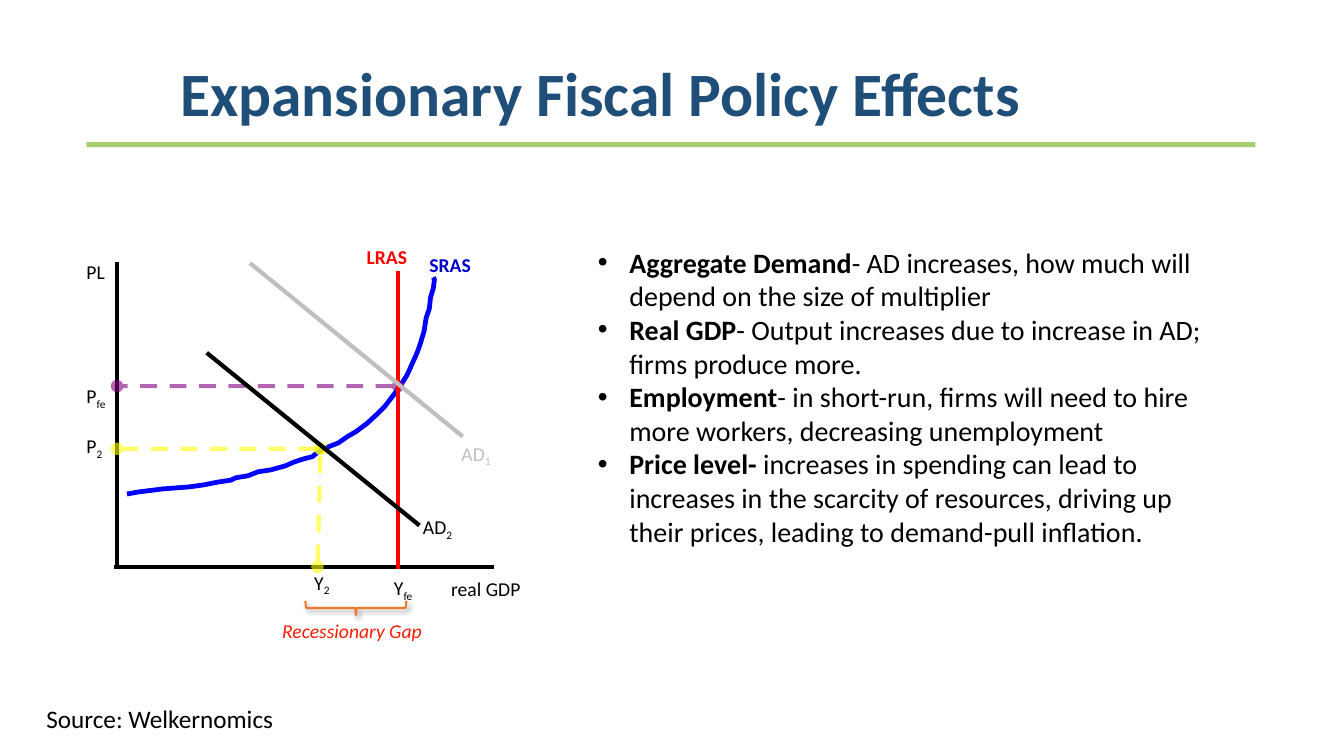
from lxml.etree import SubElement
from pptx import Presentation
from pptx.dml.color import RGBColor
from pptx.enum.dml import MSO_LINE
from pptx.enum.shapes import MSO_CONNECTOR, MSO_SHAPE
from pptx.enum.text import MSO_ANCHOR, MSO_AUTO_SIZE, PP_ALIGN
from pptx.oxml.ns import qn
from pptx.util import Cm, Pt

FONT = "Calibri"
BLACK, GREY, RED = "000000", "BFBFBF", "FF0000"
PURPLE, YELLOW = "800080", "FFFF00"
LEFT_AXIS, BOTTOM_AXIS = 1.02, 8.23
Y_FE, Y_2 = 8.1, 6.15
P_FE, P_2 = 3.68, 5.26

SRAS_POINTS = [
    (1.27, 6.4), (1.55, 6.35), (2.18, 6.27), (2.84, 6.22), (3.2, 6.17),
    (3.56, 6.1), (3.89, 6.05), (4.01, 5.99), (4.32, 5.94), (4.57, 5.84),
    (4.9, 5.79), (5.26, 5.69), (5.49, 5.59), (5.74, 5.51), (5.94, 5.46),
    (6.1, 5.33), (6.35, 5.21), (6.6, 5.11), (6.83, 4.95), (7.04, 4.83),
    (7.32, 4.62), (7.57, 4.39), (7.77, 4.19), (8, 3.89), (8.2, 3.61),
    (8.33, 3.4), (8.43, 3.18), (8.59, 2.82), (8.66, 2.62), (8.76, 2.29),
    (8.81, 1.96), (8.89, 1.73), (8.92, 1.45), (8.99, 1.22), (9.02, 0.99),
    (8.99, 0.94),
]

SOLID_LINES = [
    (LEFT_AXIS, 0.56, LEFT_AXIS, 8.2, BLACK),
    (0.94, BOTTOM_AXIS, 10.52, BOTTOM_AXIS, BLACK),
]
GUIDES = [
    (Y_FE, P_FE, LEFT_AXIS, P_FE, PURPLE),
    (Y_2, P_2, LEFT_AXIS, P_2, YELLOW),
    (6.07, BOTTOM_AXIS, Y_2, P_2, YELLOW),
]
CURVES = [
    (Y_FE, 8.28, Y_FE, 0.79, RED),
    (4.37, 0.58, 9.73, 4.95, GREY),
    (3.28, 2.84, 8.64, 7.19, BLACK),
]

LABELS = [
    ("PL", "", 0, 0.38, 1.75, BLACK, False, False),
    ("SRAS", "", 8.64, 0.2, 1.93, "0000CC", True, False),
    ("LRAS", "", 7.06, 0, 1.93, RED, True, False),
    ("real GDP", "", 9.19, 8.36, 2.92, BLACK, False, False),
    ("Recessionary Gap", "", 4.93, 9.42, 5.08, "F81D06", False, True),
    ("P", "fe", 0, 3.51, 1.22, BLACK, False, False),
    ("P", "2", 0, 4.75, 1.22, BLACK, False, False),
    ("Y", "fe", 7.75, 8.33, 1.3, BLACK, False, False),
    ("Y", "2", 5.74, 8.2, 1.22, BLACK, False, False),
    ("AD", "1", 9.45, 4.95, 1.93, GREY, False, False),
    ("AD", "2", 8.48, 6.81, 1.93, BLACK, False, False),
]

EFFECTS = [
    ("Aggregate Demand", "- AD increases, how much will depend on the size of multiplier"),
    ("Real GDP", "- Output increases due to increase in AD; firms produce more."),
    ("Employment", "- in short-run, firms will need to hire more workers, decreasing unemployment"),
    ("Price level- ", "increases in spending can lead to increases in the scarcity of resources, "
                      "driving up their prices, leading to demand-pull inflation."),
]


def rgb(value):
    """Turn a hex string into a colour."""
    return RGBColor.from_string(value)


def style_run(r, size, color, bold=False, italic=False):
    """Format one run."""
    r.font.name, r.font.size = FONT, Pt(size)
    r.font.bold, r.font.italic = bold, italic
    r.font.color.rgb = rgb(color)


def place(sp, x, y, w, h):
    """Put a shape in a box given in centimetres."""
    sp.left, sp.top, sp.width, sp.height = Cm(x), Cm(y), Cm(w), Cm(h)


def set_frame(tf, inset):
    """Set wrapping, anchoring and equal insets of a text frame."""
    tf.word_wrap = True
    tf.auto_size = MSO_AUTO_SIZE.NONE
    tf.vertical_anchor = MSO_ANCHOR.TOP
    tf.margin_left = tf.margin_right = tf.margin_top = tf.margin_bottom = Cm(inset)


def add_line(s, x1, y1, x2, y2, color, guide=False):
    """Draw a solid line, or a translucent dashed guide with round ends."""
    cn = s.shapes.add_connector(MSO_CONNECTOR.STRAIGHT, Cm(x1), Cm(y1), Cm(x2), Cm(y2))
    cn.line.color.rgb, cn.line.width = rgb(color), Pt(3)
    if guide:
        cn.line.dash_style = MSO_LINE.DASH
        ln = cn.line._get_or_add_ln()
        SubElement(ln.find(".//" + qn("a:srgbClr")), qn("a:alpha"), val="60000")
        for end in ("a:headEnd", "a:tailEnd"):
            SubElement(ln, qn(end), type="oval")
    SubElement(cn._element.spPr, qn("a:effectLst"))


def add_label(s, x, y, w, text, sub, color, bold, italic):
    """Write a graph label with an optional subscript."""
    tf = s.shapes.add_textbox(Cm(x), Cm(y), Cm(w), Cm(0.86)).text_frame
    tf.word_wrap = True
    p = tf.paragraphs[0]
    p.text = text
    if sub:
        r = p.add_run()
        r.text = sub
        r.font._element.set("baseline", "-25000")
    for r in p.runs:
        style_run(r, 14, color, bold, italic)


def add_sras(s, x, y):
    """Draw the short-run supply curve."""
    points = [(Cm(x + dx), Cm(y + dy)) for dx, dy in SRAS_POINTS]
    fb = s.shapes.build_freeform(*points[0])
    fb.add_line_segments(points[1:], close=False)
    sp = fb.convert_to_shape()
    sp.shadow.inherit = False
    sp.fill.background()
    sp.line.color.rgb, sp.line.width = rgb("0000FF"), Pt(3.4)


def add_gap_brace(s, x, y, w, h):
    """Draw the downward brace with a soft shadow, filling the given box."""
    sp = s.shapes.add_shape(MSO_SHAPE.LEFT_BRACE, Cm(x + (w - h) / 2), Cm(y + (h - w) / 2), Cm(h), Cm(w))
    sp.rotation = 270
    sp.fill.background()
    sp.line.color.rgb, sp.line.width = rgb("EC792B"), Pt(1.5)
    sp.shadow.inherit = False
    effects = sp._element.spPr.find(qn("a:effectLst"))
    shadow = SubElement(effects, qn("a:outerShdw"), blurRad=str(Pt(4)), dist=str(Pt(3)),
                        dir="2700000", rotWithShape="0")
    color = SubElement(shadow, qn("a:srgbClr"), val=BLACK)
    SubElement(color, qn("a:alpha"), val="40000")


def add_graph(s, x, y):
    """Draw the supply and demand graph from its top left corner."""
    def draw(lines, guide=False):
        """Draw a group of lines inside the graph."""
        for x1, y1, x2, y2, color in lines:
            add_line(s, x + x1, y + y1, x + x2, y + y2, color, guide)

    draw(SOLID_LINES)
    add_sras(s, x, y)
    draw(GUIDES, guide=True)
    draw(CURVES)
    for text, sub, dx, dy, w, color, bold, italic in LABELS:
        add_label(s, x + dx, y + dy, w, text, sub, color, bold, italic)
    add_gap_brace(s, x + 5.77, y + 9.09, 2.54, 0.36)


def add_heading(s, x, y, w, h):
    """Fill the title and draw the green rule under it."""
    rule = s.shapes.add_shape(MSO_SHAPE.RECTANGLE, Cm(x - 0.26), Cm(y + 2.11), Cm(29.46), Cm(0.13))
    rule.shadow.inherit = False
    rule.fill.solid()
    rule.fill.fore_color.rgb = rgb("A7CE6F")
    rule.line.fill.background()
    sp = s.shapes.title
    place(sp, x, y, w, h)
    set_frame(sp.text_frame, 0.13)
    p = sp.text_frame.paragraphs[0]
    p.text = "Expansionary Fiscal Policy Effects"
    p.alignment, p.line_spacing = PP_ALIGN.CENTER, 0.9
    style_run(p.runs[0], 44, "1F4E79", bold=True)


def add_effects(s, x, y, w, h):
    """Fill the body with the list of effects."""
    sp = s.placeholders[1]
    place(sp, x, y, w, h)
    tf = sp.text_frame
    set_frame(tf, 0.13)
    for i, (term, effect) in enumerate(EFFECTS):
        p = tf.add_paragraph() if i else tf.paragraphs[0]
        p.text = term
        p.space_before = Pt(0)
        pPr = p._p.get_or_add_pPr()
        pPr.set("marL", str(Cm(0.79)))
        pPr.set("indent", str(-Cm(0.79)))
        p.add_run().text = effect
        for r, bold in zip(p.runs, (True, False)):
            style_run(r, 20, BLACK, bold)


def add_source(s, x, y, w, h):
    """Write the source line."""
    tf = s.shapes.add_textbox(Cm(x), Cm(y), Cm(w), Cm(h)).text_frame
    set_frame(tf, 0.13)
    tf.text = "Source: Welkernomics"
    style_run(tf.paragraphs[0].runs[0], 18, BLACK)


def main():
    """Build and save the slide."""
    prs = Presentation()
    prs.slide_width, prs.slide_height = Cm(33.87), Cm(19.05)
    s = prs.slides.add_slide(prs.slide_layouts[1])
    add_heading(s, 2.44, 1.47, 25.4, 1.7)
    add_graph(s, 1.93, 6.05)
    add_effects(s, 14.94, 6.05, 15.72, 7.95)
    add_source(s, 1.04, 17.6, 6.93, 1.02)
    prs.save("out.pptx")


if __name__ == "__main__":
    main()
